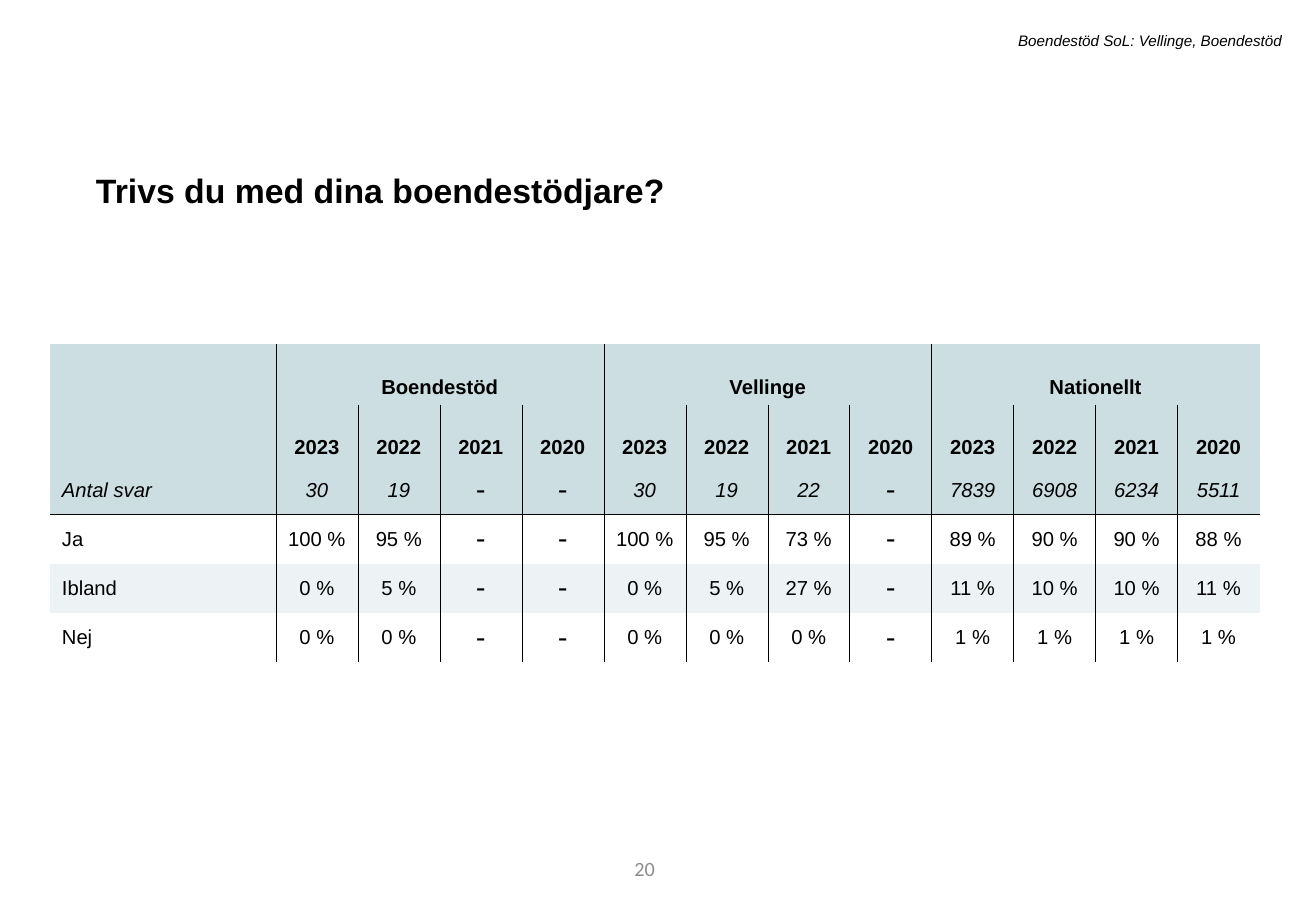
from lxml import etree
from pptx import Presentation
from pptx.dml.color import RGBColor
from pptx.enum.text import MSO_ANCHOR, MSO_AUTO_SIZE, PP_ALIGN
from pptx.oxml.ns import qn
from pptx.util import Pt

LEFT, CENTER, RIGHT = PP_ALIGN.LEFT, PP_ALIGN.CENTER, PP_ALIGN.RIGHT
TOP, MIDDLE, BOTTOM = MSO_ANCHOR.TOP, MSO_ANCHOR.MIDDLE, MSO_ANCHOR.BOTTOM
FIXED = MSO_AUTO_SIZE.NONE

BLACK, GRAY, HEAD, BAND = "000000", "8C8C8C", "CCDEE1", "EDF3F4"
TITLE_ONLY = 5

GROUPS = ["Boendestöd", "Vellinge", "Nationellt"]
YEARS = ["2023", "2022", "2021", "2020"]
COUNTS = ["Antal svar", "30", "19", "-", "-", "30", "19", "22", "-",
          "7839", "6908", "6234", "5511"]
SHARES = [
    ["Ja", 100, 95, None, None, 100, 95, 73, None, 89, 90, 90, 88],
    ["Ibland", 0, 5, None, None, 0, 5, 27, None, 11, 10, 10, 11],
    ["Nej", 0, 0, None, None, 0, 0, 0, None, 1, 1, 1, 1],
]
COUNT_ROW = 2
HEIGHTS = [36, 36, 29.2, 29.2, 29.2, 29.2]
LABEL_W = 134


def color(code):
    return RGBColor.from_string(code)


def write(frame, text, size, font="Arial", tint=BLACK, bold=False,
          italic=False, align=LEFT):
    para = frame.paragraphs[0]
    para.text = text
    para.alignment = align
    style = para.font
    style.name, style.size = font, Pt(size)
    style.bold, style.italic = bold, italic
    style.color.rgb = color(tint)
    return para


def add_title(slide, box, text):
    title = slide.shapes.title
    title.left, title.top, title.width, title.height = map(Pt, box)
    frame = title.text_frame
    frame.word_wrap = True
    frame.auto_size = FIXED
    frame.vertical_anchor = TOP
    para = write(frame, text, 20, bold=True)
    para.line_spacing = 1.2
    para.space_before = Pt(10)


def add_text(slide, box, text, size, anchor=TOP, **style):
    frame = slide.shapes.add_textbox(*map(Pt, box)).text_frame
    frame.word_wrap = True
    frame.vertical_anchor = anchor
    write(frame, text, size, align=RIGHT, **style)


def set_edges(cell, shown):
    """Draw the sides named in shown (of L, R, T, B) and clear the others."""
    props = cell._tc.get_or_add_tcPr()
    for side in "LRTB":
        line = etree.SubElement(props, qn(f"a:ln{side}"), w=str(Pt(0.25)))
        if side in shown:
            fill = etree.SubElement(line, qn("a:solidFill"))
            etree.SubElement(fill, qn("a:srgbClr"), val=BLACK)
        else:
            etree.SubElement(line, qn("a:noFill"))


def format_cell(cell, row, col, last):
    edges = ("L" if col > 0 else "") + ("R" if col < last else "")
    edges += {COUNT_ROW: "B", COUNT_ROW + 1: "T"}.get(row, "")
    set_edges(cell, edges)
    shade = HEAD if row <= COUNT_ROW else BAND if row == COUNT_ROW + 2 else None
    if shade:
        cell.fill.solid()
        cell.fill.fore_color.rgb = color(shade)
    else:
        cell.fill.background()
    cell.vertical_anchor = BOTTOM if row < COUNT_ROW else MIDDLE


def fill_cell(cell, text, row, col):
    align = CENTER if col else LEFT
    if text == "-":
        write(cell.text_frame, text, 18, font="Calibri", align=align)
    elif text:
        write(cell.text_frame, text, 12, bold=row < COUNT_ROW,
              italic=row == COUNT_ROW, align=align)


def table_rows():
    span = len(YEARS)
    heads = [""]
    for group in GROUPS:
        heads += [group] + [""] * (span - 1)
    shares = [[name] + ["-" if n is None else f"{n} %" for n in nums]
              for name, *nums in SHARES]
    return [heads, [""] + YEARS * len(GROUPS), COUNTS] + shares


def add_results(slide, box):
    rows = table_rows()
    cols = len(rows[0])
    table = slide.shapes.add_table(len(rows), cols, *map(Pt, box)).table
    table.first_row = table.horz_banding = False
    year_w = (box[2] - LABEL_W) / (cols - 1)
    for col, column in enumerate(table.columns):
        column.width = Pt(year_w if col else LABEL_W)
    for row, height in zip(table.rows, HEIGHTS):
        row.height = Pt(height)
    span = len(YEARS)
    for col in range(1, cols, span):
        table.cell(0, col).merge(table.cell(0, col + span - 1))
    for row, texts in enumerate(rows):
        for col, text in enumerate(texts):
            cell = table.cell(row, col)
            if not cell.is_spanned:
                end = col + cell.span_width - 1
                format_cell(cell, row, col, cols - 1 - (end - col))
                fill_cell(cell, text, row, col)


def main():
    deck = Presentation()
    deck.slide_width, deck.slide_height = Pt(780), Pt(540)
    slide = deck.slides.add_slide(deck.slide_layouts[TITLE_ONLY])
    add_text(slide, (219.6, 500.4, 175.7, 28.8), "20", 12, MIDDLE,
             font="Calibri", tint=GRAY)
    add_title(slide, (49.7, 92.2, 676.8, 33.8),
              "Trivs du med dina boendestödjare?")
    add_text(slide, (128.9, 15.1, 637.9, 18),
             "Boendestöd SoL: Vellinge, Boendestöd", 9, italic=True)
    add_results(slide, (29.5, 203.8, 717.2, sum(HEIGHTS)))
    deck.save("out.pptx")


if __name__ == "__main__":
    main()
